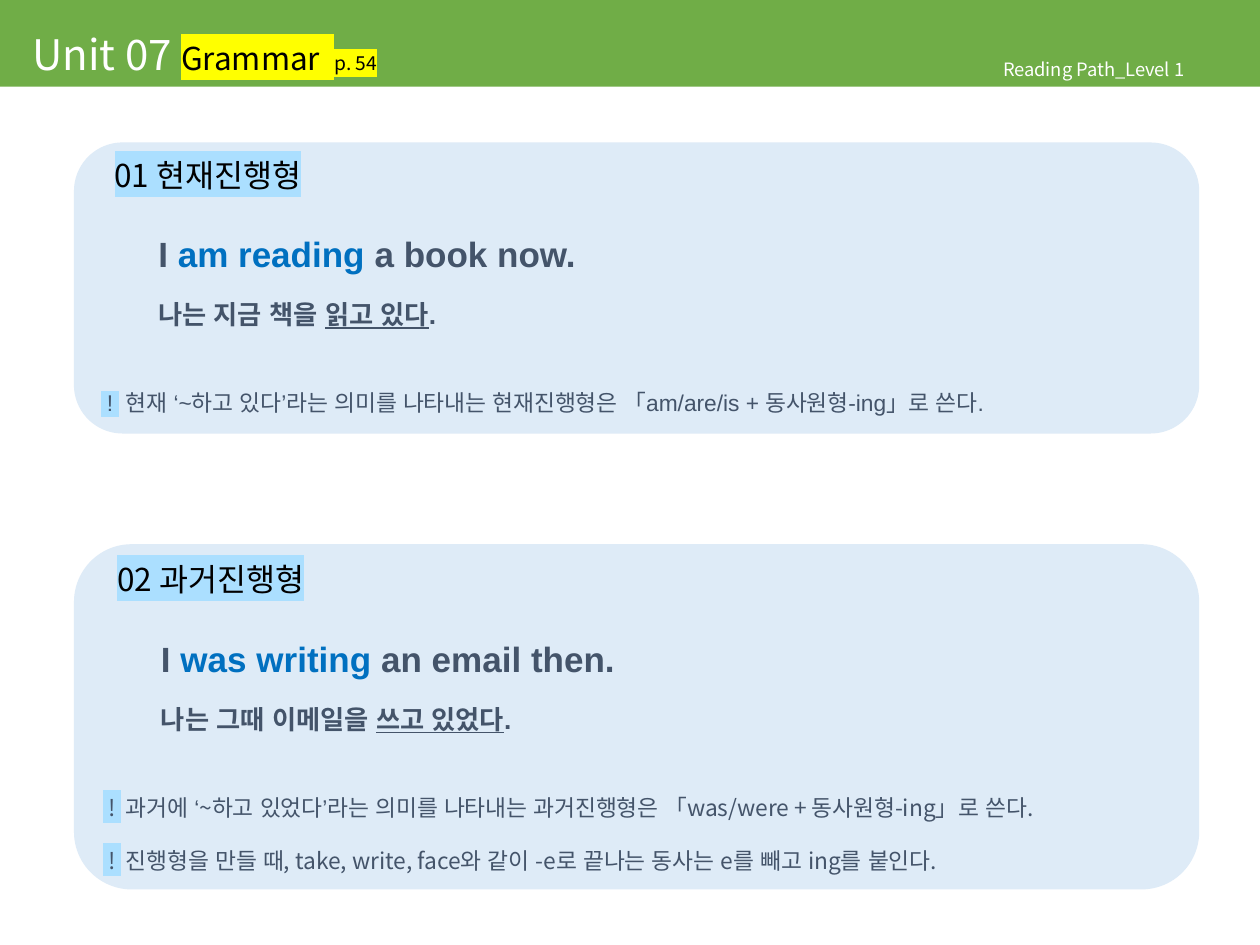
from pptx import Presentation
from pptx.dml.color import RGBColor
from pptx.enum import shapes, text
from pptx.oxml import ns, xmlchemy
from pptx.util import Pt

THEME = dict(
    noto="Noto Sans CJK KR", arial="Arial",
    white="FFFFFF", black="000000", green="70AD47", card="DEEBF7",
    slate="44546A", blue="0070C0", yellow="FFFF00", sky="ABDFFF",
    unit=24, heading=18, sentence=20, korean=15, note=13, page=11, book=10.5,
)
T = THEME

# Content
UNIT, TOPIC, PAGE = "Unit 07 ", "Grammar  ", "p. 54"
BOOK = "Reading Path_Level 1"
CARDS = [
    dict(top=81.4, height=166.3, note_font=T["arial"],
         heading="01 현재진행형",
         english=("I ", "am reading", " a book now."),
         korean=("나는 지금 책을 ", "읽고 있다", "."),
         notes=["현재 ‘~하고 있다’라는 의미를 나타내는 현재진행형은 "
                "「am/are/is + 동사원형-ing」로 쓴다."]),
    dict(top=311, height=197.3, note_font=T["noto"],
         heading="02 과거진행형",
         english=("I ", "was writing", " an email then."),
         korean=("나는 그때 이메일을 ", "쓰고 있었다", "."),
         notes=["과거에 ‘~하고 있었다’라는 의미를 나타내는 과거진행형은 "
                "「was/were + 동사원형-ing」로 쓴다.",
                "진행형을 만들 때, take, write, face와 같이 -e로 끝나는 동사는 "
                "e를 빼고 ing를 붙인다."]),
]
CARD_LEFT, CARD_WIDTH = 42.3, 643


def add_run(p, words, size, color, font=T["noto"], asian=T["arial"],
            bold=False, underline=False, highlight=None):
    r = p.add_run()
    r.text = words
    f = r.font
    f.size, f.bold, f.underline, f.name = Pt(size), bold, underline, font
    f.color.rgb = RGBColor.from_string(color)
    rpr = r.font._element
    ea = xmlchemy.OxmlElement("a:ea")
    ea.set("typeface", asian)
    rpr.find(ns.qn("a:latin")).addnext(ea)
    if highlight:
        mark = xmlchemy.OxmlElement("a:highlight")
        rgb = xmlchemy.OxmlElement("a:srgbClr")
        rgb.set("val", highlight)
        mark.append(rgb)
        rpr.find(ns.qn("a:solidFill")).addnext(mark)


def set_frame(tf, left, top, right, bottom, anchor=text.MSO_ANCHOR.TOP):
    tf.word_wrap = True
    tf.auto_size = text.MSO_AUTO_SIZE.NONE
    tf.vertical_anchor = anchor
    tf.margin_left, tf.margin_top = Pt(left), Pt(top)
    tf.margin_right, tf.margin_bottom = Pt(right), Pt(bottom)


def set_paragraph(p, before=0, indent=0, spacing=1.0):
    p.alignment = text.PP_ALIGN.LEFT
    p.space_before, p.line_spacing = Pt(before), spacing
    ppr = p._p.get_or_add_pPr()
    ppr.set("marL", str(Pt(indent)))
    ppr.set("indent", "0")
    return p


def fill(sp, color):
    sp.fill.solid()
    sp.fill.fore_color.rgb = RGBColor.from_string(color)
    sp.line.fill.background()


def add_card(slide, card):
    sp = slide.shapes.add_shape(
        shapes.MSO_SHAPE.ROUNDED_RECTANGLE, Pt(CARD_LEFT), Pt(card["top"]),
        Pt(CARD_WIDTH), Pt(card["height"]))
    sp.adjustments[0] = 0.167
    sp.shadow.inherit = False
    fill(sp, T["card"])
    tf = sp.text_frame
    set_frame(tf, 7.2, 3.7, 7.2, 0)

    # Heading
    p = set_paragraph(tf.paragraphs[0], indent=8, spacing=0.8)
    add_run(p, card["heading"], T["heading"], T["black"], asian=T["noto"],
            highlight=T["sky"])

    # Example and its translation, with the verb picked out
    p = set_paragraph(tf.add_paragraph(), before=22.4, indent=33)
    for words, color in zip(card["english"], ("slate", "blue", "slate")):
        add_run(p, words, T["sentence"], T[color], font=T["arial"], bold=True)
    p = set_paragraph(tf.add_paragraph(), before=10, indent=33,
                      spacing=Pt(21.7))
    for words, line in zip(card["korean"], (False, True, False)):
        add_run(p, words, T["korean"], T["slate"], font=T["arial"],
                bold=True, underline=line)

    # Notes
    for i, note in enumerate(card["notes"]):
        p = set_paragraph(tf.add_paragraph(), before=11.5 if i else 30.5,
                          spacing=Pt(18.8))
        style = dict(size=T["note"], color=T["slate"], font=card["note_font"])
        add_run(p, " ! ", highlight=T["sky"], **style)
        add_run(p, " " + note, **style)


def main():
    prs = Presentation()
    prs.slide_width, prs.slide_height = Pt(720), Pt(540)
    slide = prs.slides.add_slide(prs.slide_layouts[5])

    # Title band
    title = slide.shapes.title
    title.left, title.top, title.width, title.height = (
        Pt(0), Pt(0), Pt(720), Pt(49.5))
    fill(title, T["green"])
    set_frame(title.text_frame, 18.5, 0, 7.2, 4.1, text.MSO_ANCHOR.BOTTOM)
    p = set_paragraph(title.text_frame.paragraphs[0])
    add_run(p, UNIT, T["unit"], T["white"])
    add_run(p, TOPIC, T["heading"], T["black"], highlight=T["yellow"])
    add_run(p, PAGE, T["page"], T["black"], highlight=T["yellow"])

    # Book label
    label = slide.shapes.add_textbox(Pt(568.3), Pt(30), Pt(139), Pt(19))
    set_frame(label.text_frame, 5, 3, 5, 3)
    p = set_paragraph(label.text_frame.paragraphs[0])
    add_run(p, BOOK, T["book"], T["white"])

    # Grammar cards
    for card in CARDS:
        add_card(slide, card)

    prs.save("out.pptx")


if __name__ == "__main__":
    main()
